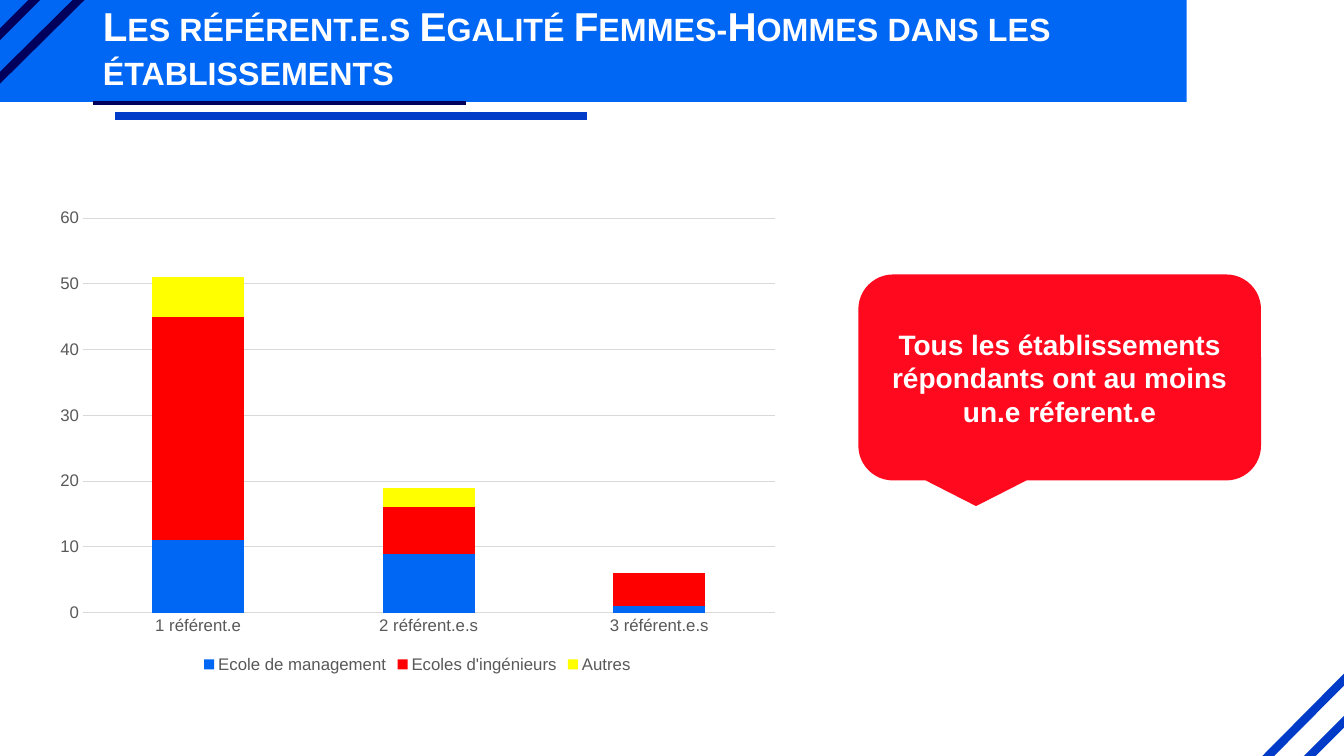
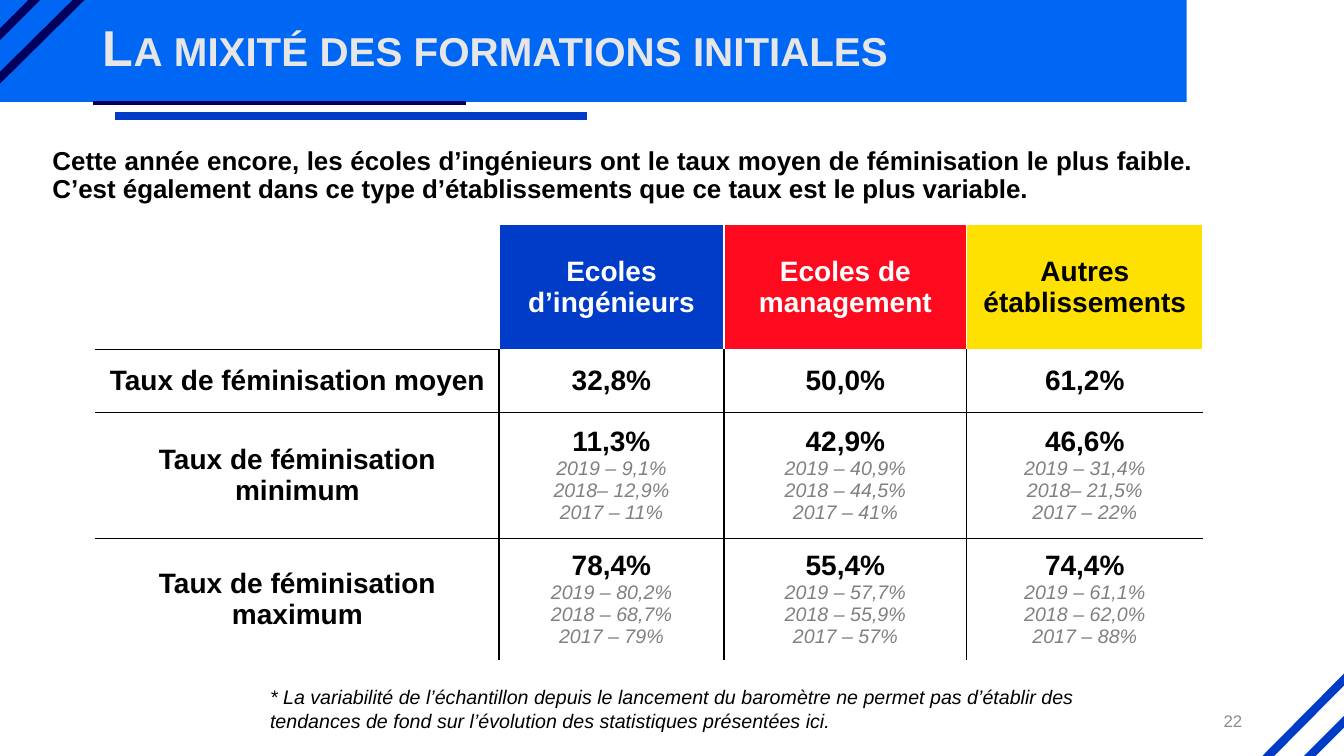
from dataclasses import dataclass

from lxml import etree
from pptx import Presentation
from pptx.chart.data import CategoryChartData
from pptx.dml.color import RGBColor
from pptx.enum.chart import XL_CHART_TYPE, XL_LEGEND_POSITION, XL_TICK_MARK
from pptx.enum.shapes import MSO_CONNECTOR, MSO_SHAPE
from pptx.enum.text import MSO_ANCHOR, MSO_AUTO_SIZE, PP_ALIGN
from pptx.oxml.ns import qn
from pptx.slide import Slide
from pptx.util import Inches, Pt

FONT = "Arial"
BLUE = RGBColor(0x00, 0x67, 0xF4)
ROYAL = RGBColor(0x00, 0x3C, 0xC8)
NAVY = RGBColor(0x00, 0x00, 0x5C)
RED = RGBColor(0xFF, 0x09, 0x1E)
YELLOW = RGBColor(0xFF, 0xE1, 0x01)
CHART_RED = RGBColor(0xFF, 0x00, 0x00)
CHART_YELLOW = RGBColor(0xFF, 0xFF, 0x00)
WHITE = RGBColor(0xFF, 0xFF, 0xFF)
BLACK = RGBColor(0x00, 0x00, 0x00)
PALE = RGBColor(0xE7, 0xE6, 0xE6)
GRID = RGBColor(0xD9, 0xD9, 0xD9)
AXIS_GREY = RGBColor(0x59, 0x59, 0x59)
HISTORY_GREY = RGBColor(0x80, 0x80, 0x80)
NUMBER_GREY = RGBColor(0x8C, 0x8C, 0x8C)

LEFT, CENTER, RIGHT, JUSTIFY = PP_ALIGN.LEFT, PP_ALIGN.CENTER, PP_ALIGN.RIGHT, PP_ALIGN.JUSTIFY
TOP, MIDDLE = MSO_ANCHOR.TOP, MSO_ANCHOR.MIDDLE
NO_TICK = XL_TICK_MARK.NONE
TITLE_AND_CONTENT, TITLE_ONLY = 1, 5


@dataclass(frozen=True)
class Stripe:
    start: tuple[float, float]
    end: tuple[float, float]
    color: RGBColor
    width: float = 6


@dataclass(frozen=True)
class Bar:
    name: str
    values: tuple
    color: RGBColor


@dataclass(frozen=True)
class Heading:
    text: str
    fill: RGBColor
    color: RGBColor


@dataclass(frozen=True)
class Rate:
    label: str
    cells: tuple[tuple[str, ...], ...]


STRIPES = (
    Stripe((12.84, 7.65), (13.48, 7.01), ROYAL),
    Stripe((12.42, 7.66), (13.51, 6.56), ROYAL),
    Stripe((-0.09, 0.43), (0.43, -0.09), NAVY),
    Stripe((-0.09, 0.86), (0.87, -0.09), NAVY),
    Stripe((1.14, 1.15), (5.82, 1.15), ROYAL),
    Stripe((0.92, 1.02), (4.62, 1.02), NAVY, 3),
)

CATEGORIES = ("1 référent.e", "2 référent.e.s", "3 référent.e.s")
BARS = (
    Bar("Ecole de management", (11, 9, 1), BLUE),
    Bar("Ecoles d'ingénieurs", (34, 7, 5), CHART_RED),
    Bar("Autres", (6, 3, None), CHART_YELLOW),
)

HEADINGS = (
    Heading("", WHITE, BLACK),
    Heading("Ecoles d’ingénieurs", ROYAL, WHITE),
    Heading("Ecoles de management", RED, WHITE),
    Heading("Autres établissements", YELLOW, BLACK),
)
RATES = (
    Rate("Taux de féminisation moyen", (("32,8%",), ("50,0%",), ("61,2%",))),
    Rate("Taux de féminisation minimum", (
        ("11,3%", "2019 – 9,1%", "2018– 12,9%", "2017 – 11%"),
        ("42,9%", "2019 – 40,9%", "2018 – 44,5%", "2017 – 41%"),
        ("46,6%", "2019 – 31,4%", "2018– 21,5%", "2017 – 22%"),
    )),
    Rate("Taux de féminisation maximum", (
        ("78,4%", "2019 – 80,2%", "2018 – 68,7%", "2017 – 79%"),
        ("55,4%", "2019 – 57,7%", "2018 – 55,9%", "2017 – 57%"),
        ("74,4%", "2019 – 61,1%", "2018 – 62,0%", "2017 – 88%"),
    )),
)
COLUMN_WIDTHS = (4, 2.23, 2.41, 2.34)
ROW_HEIGHTS = (1.24, 0.62, 1.25, 1.21)


def style_font(font, size: float, color: RGBColor, bold: bool = False,
               italic: bool = False) -> None:
    font.name, font.size = FONT, Pt(size)
    font.bold, font.italic = bold, italic
    font.color.rgb = color


def place(shape, left: float, top: float, width: float, height: float) -> None:
    shape.left, shape.top = Inches(left), Inches(top)
    shape.width, shape.height = Inches(width), Inches(height)


def write(box, text: str, size: float, color: RGBColor, align=LEFT, anchor=TOP,
          bold: bool = False, italic: bool = False):
    frame = box.text_frame
    frame.word_wrap = True
    frame.auto_size = MSO_AUTO_SIZE.NONE
    frame.vertical_anchor = anchor
    frame.text = text
    para = frame.paragraphs[0]
    para.alignment = align
    para.space_before = Pt(0)
    style_font(para.font, size, color, bold, italic)
    return para


def add_block(page: Slide, preset, bounds: tuple, color: RGBColor):
    block = page.shapes.add_shape(preset, *map(Inches, bounds))
    block.shadow.inherit = False
    block.fill.solid()
    block.fill.fore_color.rgb = color
    block.line.color.rgb = color
    block.line.width = Pt(1)
    return block


def add_stripe(page: Slide, stripe: Stripe):
    line = page.shapes.add_connector(
        MSO_CONNECTOR.STRAIGHT, *map(Inches, stripe.start + stripe.end))
    line.line.color.rgb = stripe.color
    line.line.width = Pt(stripe.width)
    etree.SubElement(line.element.spPr, qn("a:effectLst"))
    return line


def decorate_master(deck, page: Slide) -> None:
    """Draw the band and stripes on a page, then move them to the master."""
    band = add_block(page, MSO_SHAPE.RECTANGLE, (0, 0, 11.77, 1.01), BLUE)
    band.line.fill.background()
    decor = [band] + [add_stripe(page, stripe) for stripe in STRIPES]
    tree = deck.slide_master.shapes.element
    for order, shape in enumerate(decor):
        shape.element.xpath(".//p:cNvPr")[0].set("id", str(100 + order))
        tree.insert(2 + order, shape.element)


def set_title(page: Slide, text: str, size: float, color: RGBColor) -> None:
    title = page.shapes.title
    place(title, 0.92, 0.01, 11.5, 0.98)
    para = write(title, text, size, color, anchor=MIDDLE, bold=True)
    para.line_spacing = 0.9
    para.runs[0]._r.get_or_add_rPr().set("cap", "small")


def add_text(page: Slide, bounds: tuple, text: str, size: float, color: RGBColor,
             **style) -> None:
    write(page.shapes.add_textbox(*map(Inches, bounds)), text, size, color, **style)


def add_referent_chart(page: Slide) -> None:
    data = CategoryChartData()
    data.categories = CATEGORIES
    for bar in BARS:
        data.add_series(bar.name, bar.values)
    bounds = map(Inches, (0.45, 1.98, 7.38, 4.74))
    chart = page.shapes.add_chart(XL_CHART_TYPE.COLUMN_STACKED, *bounds, data).chart
    chart.has_title = False
    style_font(chart.font, 12, AXIS_GREY)

    plot = chart.plots[0]
    plot.gap_width, plot.overlap = 150, 100
    plot.vary_by_categories = False
    for series, bar in zip(plot.series, BARS):
        series.format.fill.solid()
        series.format.fill.fore_color.rgb = bar.color

    for axis in (chart.category_axis, chart.value_axis):
        axis.major_tick_mark = axis.minor_tick_mark = NO_TICK
        style_font(axis.tick_labels.font, 12, AXIS_GREY)
    values = chart.value_axis
    values.minimum_scale, values.maximum_scale, values.major_unit = 0, 60, 10
    values.format.line.fill.background()
    for line in (chart.category_axis.format.line, values.major_gridlines.format.line):
        line.color.rgb = GRID
        line.width = Pt(0.75)

    chart.has_legend = True
    chart.legend.position = XL_LEGEND_POSITION.BOTTOM
    chart.legend.include_in_layout = False
    style_font(chart.legend.font, 12, AXIS_GREY)


def set_borders(cell, row: int, column: int) -> None:
    """Rule the inner lines in black, but not around the coloured headings."""
    corner = row == 0 and column == 0
    black_sides = {
        "L": row > 0 and column > 0,
        "R": row > 0 and column < len(HEADINGS) - 1,
        "T": row > 1 or (row == 1 and column == 0),
        "B": 0 < row < len(RATES) or corner,
    }
    properties = cell._tc.get_or_add_tcPr()
    for side, is_black in black_sides.items():
        line = etree.SubElement(properties, qn(f"a:ln{side}"), w=str(Pt(1)))
        fill = etree.SubElement(line, qn("a:solidFill"))
        color = BLACK if is_black else WHITE
        etree.SubElement(fill, qn("a:srgbClr"), val=str(color))


def fill_cell(cell, lines: tuple[str, ...], fill: RGBColor, color: RGBColor) -> None:
    """Write a bold first line, then the earlier years in small grey italics."""
    cell.fill.solid()
    cell.fill.fore_color.rgb = fill
    cell.vertical_anchor = MIDDLE
    cell.text = "\n".join(lines)
    for order, para in enumerate(cell.text_frame.paragraphs):
        para.alignment = CENTER
        if order == 0:
            style_font(para.font, 20, color, bold=True)
        else:
            style_font(para.font, 14, HISTORY_GREY, italic=True)


def add_rate_table(page: Slide) -> None:
    bounds = map(Inches, (0.95, 2.23, sum(COLUMN_WIDTHS), sum(ROW_HEIGHTS)))
    table = page.shapes.add_table(len(ROW_HEIGHTS), len(COLUMN_WIDTHS), *bounds).table
    table.first_row = table.horz_banding = False
    for column, width in zip(table.columns, COLUMN_WIDTHS):
        column.width = Inches(width)
    for row, height in zip(table.rows, ROW_HEIGHTS):
        row.height = Inches(height)

    grid = [[((head.text,), head.fill, head.color) for head in HEADINGS]]
    for rate in RATES:
        grid.append([(lines, WHITE, BLACK) for lines in ((rate.label,), *rate.cells)])
    for row, entries in enumerate(grid):
        for column, entry in enumerate(entries):
            cell = table.cell(row, column)
            set_borders(cell, row, column)
            fill_cell(cell, *entry)


def build_referents(page: Slide) -> None:
    set_title(page, "Les référent.e.s Egalité Femmes-Hommes dans les établissements",
              28.8, WHITE)
    add_referent_chart(page)
    callout = add_block(page, MSO_SHAPE.ROUNDED_RECTANGULAR_CALLOUT,
                        (8.52, 2.73, 3.98, 2.03), RED)
    write(callout, "Tous les établissements répondants ont au moins un.e réferent.e",
          20, WHITE, CENTER, MIDDLE, bold=True)


def build_training(page: Slide) -> None:
    set_title(page, "La mixité des formations initiales", 36, PALE)
    body = page.placeholders[1]
    place(body, 0.42, 1.42, 11.5, 0.81)
    para = write(
        body,
        "Cette année encore, les écoles d’ingénieurs ont le taux moyen de féminisation "
        "le plus faible. C’est également dans ce type d’établissements que ce taux est "
        "le plus variable.",
        18.5, BLACK, JUSTIFY, bold=True)
    para.line_spacing = 0.9
    properties = para._p.get_or_add_pPr()
    properties.set("marL", "0")
    properties.set("indent", "0")
    properties.find(qn("a:defRPr")).addprevious(etree.Element(qn("a:buNone")))
    add_rate_table(page)
    add_text(page, (2.58, 6.75, 8.58, 0.57),
             "* La variabilité de l’échantillon depuis le lancement du baromètre ne permet "
             "pas d’établir des tendances de fond sur l’évolution des statistiques "
             "présentées ici.", 14, BLACK, italic=True)
    add_text(page, (9.42, 6.95, 3, 0.4), "22", 12, NUMBER_GREY,
             align=RIGHT, anchor=MIDDLE)


def main() -> None:
    deck = Presentation()
    deck.slide_width, deck.slide_height = Inches(13.33), Inches(7.5)
    referents = deck.slides.add_slide(deck.slide_layouts[TITLE_ONLY])
    decorate_master(deck, referents)
    build_referents(referents)
    build_training(deck.slides.add_slide(deck.slide_layouts[TITLE_AND_CONTENT]))
    deck.save("out.pptx")


if __name__ == "__main__":
    main()
